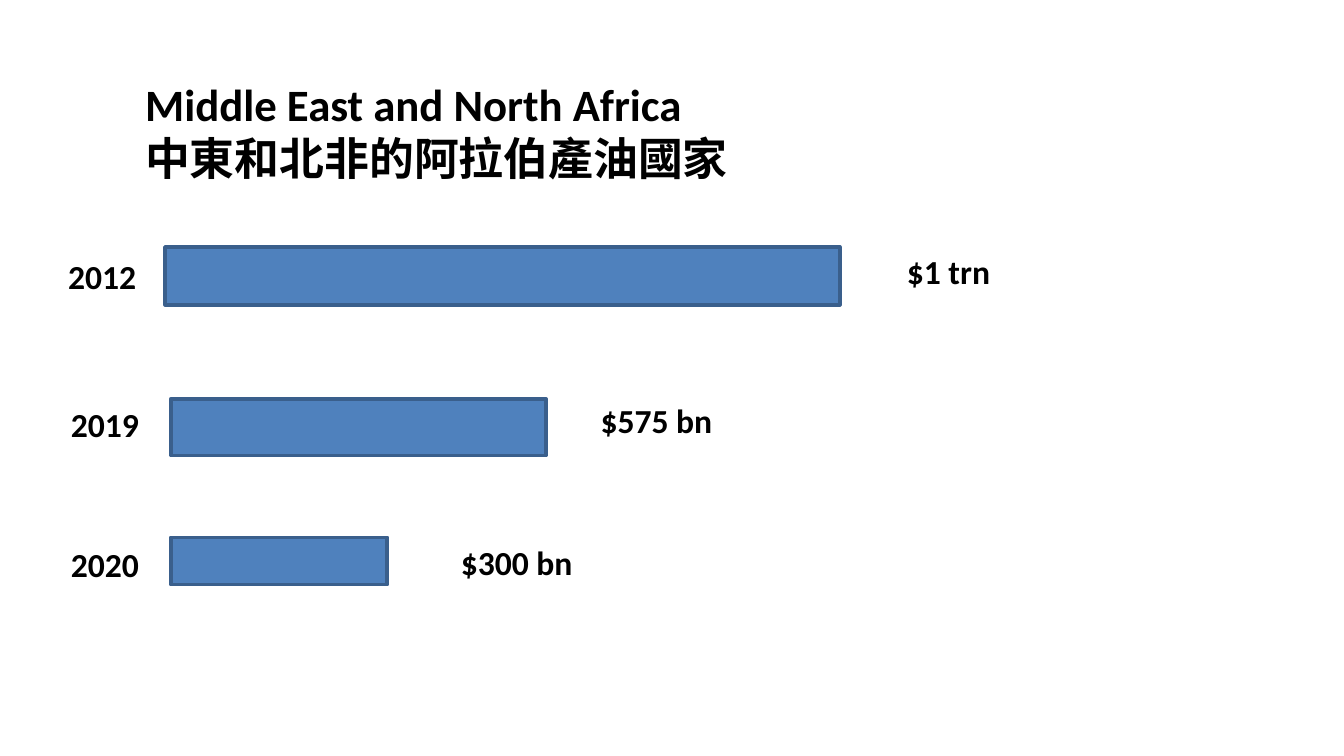
from dataclasses import dataclass

from pptx import Presentation
from pptx.dml.color import RGBColor
from pptx.enum.shapes import MSO_SHAPE
from pptx.enum.text import MSO_ANCHOR, MSO_AUTO_SIZE, PP_ALIGN
from pptx.shapes.base import BaseShape
from pptx.slide import Slide
from pptx.util import Cm, Pt


@dataclass(frozen=True)
class Theme:
    font: str = "Calibri"
    ink: RGBColor = RGBColor(0x00, 0x00, 0x00)
    fill: RGBColor = RGBColor(0x4F, 0x81, 0xBD)
    edge: RGBColor = RGBColor(0x3A, 0x5F, 0x8C)
    edge_width: Pt = Pt(2)
    title: Pt = Pt(24)
    label: Pt = Pt(18)


@dataclass(frozen=True)
class Box:
    """A rectangle in centimetres."""
    left: float
    top: float
    width: float
    height: float


@dataclass(frozen=True)
class Row:
    year: str
    value: str
    year_box: Box
    bar_box: Box
    value_box: Box


THEME = Theme()
TITLE = ("Middle East and North Africa", "中東和北非的阿拉伯產油國家")
TITLE_BOX = Box(2.49, 1.32, 11.63, 2.31)
ROWS = (
    Row("2012", "$1 trn", Box(1.04, 4.72, 1.8, 1.02),
        Box(3.12, 4.67, 12.75, 1.09), Box(16.89, 4.62, 2.31, 1.02)),
    Row("2019", "$575 bn", Box(1.09, 7.52, 1.8, 1.02),
        Box(3.23, 7.54, 7.09, 1.07), Box(11.1, 7.44, 2.64, 1.02)),
    Row("2020", "$300 bn", Box(1.09, 10.16, 1.8, 1.02),
        Box(3.23, 10.16, 4.09, 0.89), Box(8.46, 10.11, 2.64, 1.02)),
)


def place(box: Box) -> tuple[Cm, Cm, Cm, Cm]:
    return Cm(box.left), Cm(box.top), Cm(box.width), Cm(box.height)


def write(shape: BaseShape, lines: tuple[str, ...], size: Pt, wrap: bool) -> None:
    frame = shape.text_frame
    frame.text = "\n".join(lines)
    frame.word_wrap = wrap
    frame.auto_size = MSO_AUTO_SIZE.SHAPE_TO_FIT_TEXT
    frame.vertical_anchor = MSO_ANCHOR.TOP
    style = {"name": THEME.font, "size": size, "bold": True}
    for para in frame.paragraphs:
        para.alignment = PP_ALIGN.LEFT
        for key, value in style.items():
            setattr(para.font, key, value)
        para.font.color.rgb = THEME.ink


def add_title(slide: Slide) -> None:
    title = slide.shapes.title
    title.left, title.top, title.width, title.height = place(TITLE_BOX)
    write(title, TITLE, THEME.title, wrap=False)


def add_label(slide: Slide, text: str, box: Box, wrap: bool) -> None:
    label = slide.shapes.add_textbox(*place(box))
    write(label, (text,), THEME.label, wrap)


def add_bar(slide: Slide, box: Box) -> None:
    bar = slide.shapes.add_shape(MSO_SHAPE.RECTANGLE, *place(box))
    bar.shadow.inherit = False
    bar.fill.solid()
    bar.fill.fore_color.rgb = THEME.fill
    bar.line.color.rgb = THEME.edge
    bar.line.width = THEME.edge_width


def main() -> None:
    deck = Presentation()
    deck.slide_width, deck.slide_height = Cm(25.4), Cm(14.29)
    slide = deck.slides.add_slide(deck.slide_layouts.get_by_name("Title Only"))
    add_title(slide)
    for row in ROWS:
        add_label(slide, row.year, row.year_box, wrap=False)
        add_bar(slide, row.bar_box)
        add_label(slide, row.value, row.value_box, wrap=True)
    deck.save("out.pptx")


if __name__ == "__main__":
    main()
